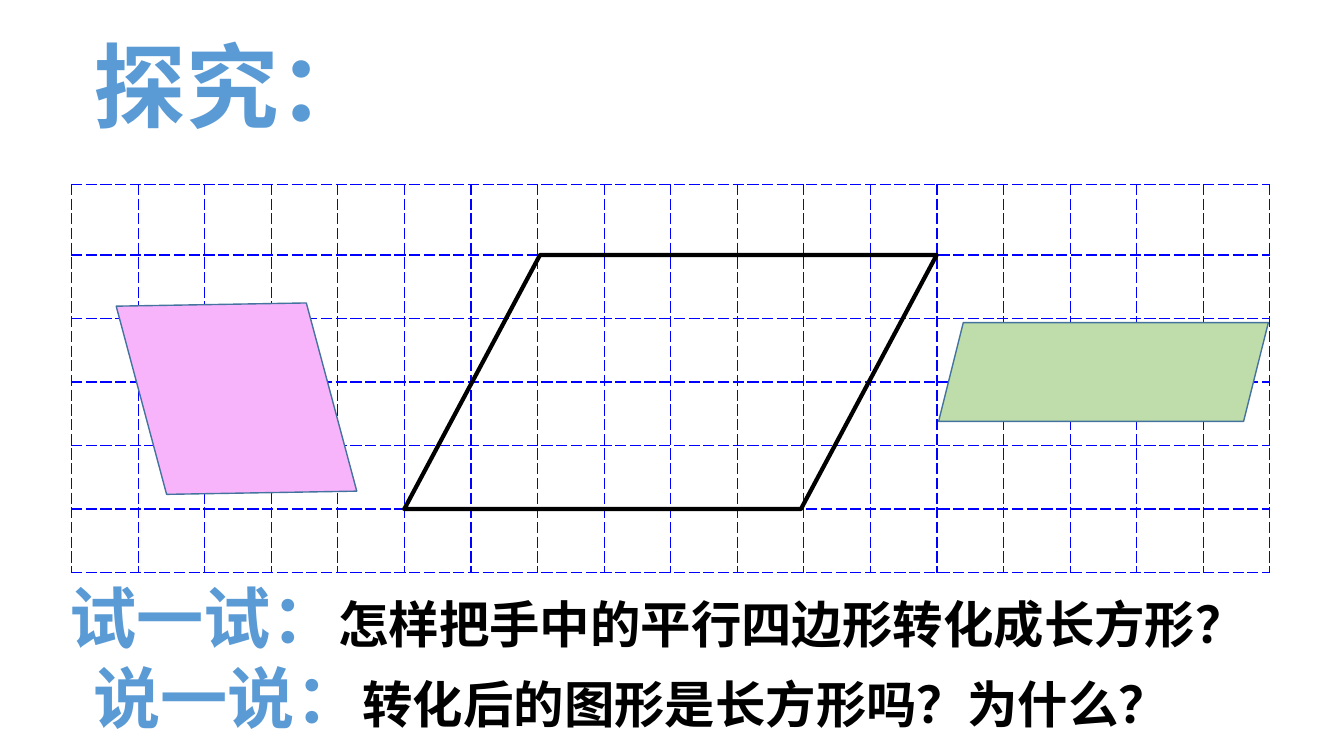
from dataclasses import dataclass

from lxml import etree
from pptx import Presentation
from pptx.dml.color import RGBColor
from pptx.enum import shapes, text
from pptx.oxml import ns
from pptx.util import Inches, Pt

FONT = "Noto Sans CJK SC"
BLUE = RGBColor(0x5B, 0x9B, 0xD5)
BLACK = RGBColor(0x00, 0x00, 0x00)
GRID_BLUE = RGBColor(0x00, 0x00, 0xFF)
EDGE_BLUE = RGBColor(0x43, 0x73, 0x9E)
GREEN = RGBColor(0xBF, 0xDD, 0xAA)
PINK = RGBColor(0xF8, 0xB4, 0xFB)

GRID_COLUMNS = 18
ROW_HEIGHTS = [0.7] + [0.63] * 5


@dataclass
class Box:
    left: float
    top: float
    width: float
    height: float

    def lengths(self) -> list[Inches]:
        return [Inches(n) for n in (self.left, self.top, self.width, self.height)]


@dataclass
class Run:
    words: str
    size: int
    color: RGBColor


@dataclass
class Line:
    box: Box
    runs: list[Run]
    alignment: text.PP_ALIGN = text.PP_ALIGN.LEFT


@dataclass
class Parallelogram:
    box: Box
    line_color: RGBColor
    line_width: float
    fill: RGBColor | None = None
    slant: float = 0.25
    rotation: float = 0


GRID_BOX = Box(0.71, 1.83, 11.89, 3.84)

PARALLELOGRAMS = [
    Parallelogram(Box(4.01, 2.53, 5.28, 2.52), BLACK, 3, slant=0.534),
    Parallelogram(Box(9.31, 3.2, 3.27, 0.98), EDGE_BLUE, 1, GREEN),
    Parallelogram(Box(1.15, 3.04, 2.39, 1.83), EDGE_BLUE, 1, PINK, rotation=75),
]

LINES = [
    Line(Box(0.83, 0.24, 3.02, 1.21), [Run("探究：", 66, BLUE)]),
    Line(Box(0.59, 5.67, 12.53, 0.91),
         [Run("试一试：", 48, BLUE),
          Run("怎样把手中的平行四边形转化成长方形？", 36, BLACK)]),
    Line(Box(0.83, 6.46, 11.1, 0.91),
         [Run("说一说：", 48, BLUE),
          Run("转化后的图形是长方形吗？为什么？", 36, BLACK)],
         text.PP_ALIGN.JUSTIFY),
]


def add_dashed_borders(cell) -> None:
    properties = cell._tc.get_or_add_tcPr()
    for position, side in enumerate(("lnL", "lnR", "lnT", "lnB")):
        border = etree.Element(ns.qn(f"a:{side}"), w=str(Pt(1)))
        fill = etree.SubElement(border, ns.qn("a:solidFill"))
        etree.SubElement(fill, ns.qn("a:srgbClr"), val=str(GRID_BLUE))
        etree.SubElement(border, ns.qn("a:prstDash"), val="lgDash")
        properties.insert(position, border)


def draw_grid(slide) -> None:
    table = slide.shapes.add_table(
        len(ROW_HEIGHTS), GRID_COLUMNS, *GRID_BOX.lengths()).table
    table.first_row = False
    table.horz_banding = False
    for column in table.columns:
        column.width = Inches(GRID_BOX.width / GRID_COLUMNS)
    for row, height in zip(table.rows, ROW_HEIGHTS):
        row.height = Inches(height)
    for cell in table.iter_cells():
        cell.fill.background()
        add_dashed_borders(cell)


def draw_parallelogram(slide, figure: Parallelogram) -> None:
    shape = slide.shapes.add_shape(
        shapes.MSO_SHAPE.PARALLELOGRAM, *figure.box.lengths())
    shape.shadow.inherit = False
    shape.adjustments[0] = figure.slant
    shape.rotation = figure.rotation
    shape.line.color.rgb = figure.line_color
    shape.line.width = Pt(figure.line_width)
    if figure.fill is None:
        shape.fill.background()
    else:
        shape.fill.solid()
        shape.fill.fore_color.rgb = figure.fill


def draw_line(slide, line: Line) -> None:
    """Draw one line of text made of differently styled runs."""
    frame = slide.shapes.add_textbox(*line.box.lengths()).text_frame
    frame.word_wrap = True
    frame.auto_size = text.MSO_AUTO_SIZE.SHAPE_TO_FIT_TEXT
    paragraph = frame.paragraphs[0]
    paragraph.alignment = line.alignment
    for part in line.runs:
        run = paragraph.add_run()
        run.text = part.words
        run.font.name = FONT
        run.font.size = Pt(part.size)
        run.font.bold = True
        run.font.color.rgb = part.color
        east_asian = etree.SubElement(run.font._element, ns.qn("a:ea"))
        east_asian.set("typeface", FONT)


def main() -> None:
    presentation = Presentation()
    presentation.slide_width = Inches(13.33)
    presentation.slide_height = Inches(7.5)
    slide = presentation.slides.add_slide(presentation.slide_layouts[6])
    draw_grid(slide)
    for line in LINES:
        draw_line(slide, line)
    for figure in PARALLELOGRAMS:
        draw_parallelogram(slide, figure)
    presentation.save("out.pptx")


if __name__ == "__main__":
    main()
